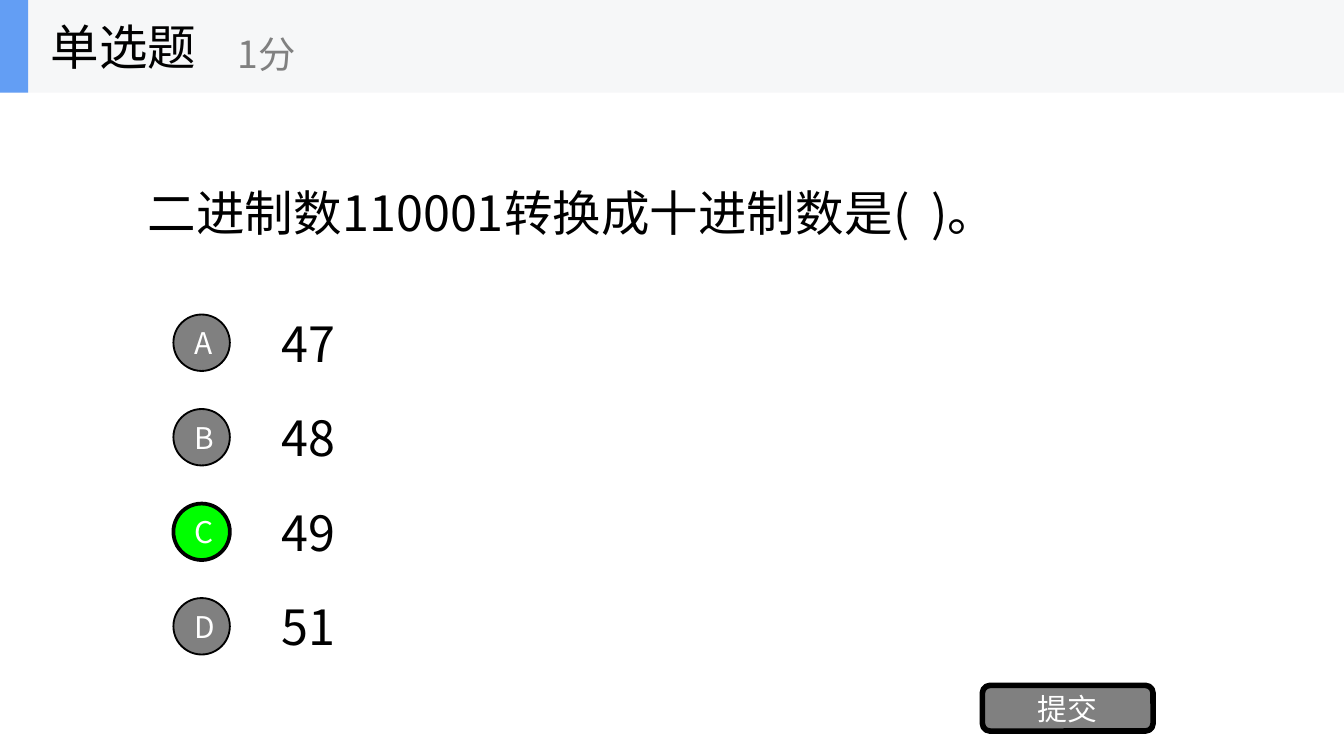
from dataclasses import dataclass

from pptx import Presentation
from pptx.dml.color import RGBColor
from pptx.enum.shapes import MSO_SHAPE
from pptx.enum.text import MSO_ANCHOR, MSO_AUTO_SIZE, PP_ALIGN
from pptx.oxml.ns import qn
from pptx.util import Inches, Pt

HEADING = "单选题"
SCORE = "1分"
QUESTION = "二进制数110001转换成十进制数是(  )。"
OPTIONS = [("A", "47"), ("B", "48"), ("C", "49"), ("D", "51")]
CORRECT = "C"
SUBMIT = "提交"


@dataclass(frozen=True)
class Theme:
    font: str = "Noto Sans CJK SC"
    ink: str = "000000"
    light: str = "FFFFFF"
    muted: str = "808080"
    correct: str = "00FF00"
    band: str = "F6F7F8"
    accent: str = "639EF4"
    body_size: int = 26
    score_size: int = 20
    button_size: int = 16


THEME = Theme()
SLIDE_WIDTH = 10
SLIDE_HEIGHT = SLIDE_WIDTH * 9 / 16
BAND_HEIGHT = 0.69
FIRST_CENTER, LAST_CENTER = 2.55, 4.66
OPTION_PITCH = (LAST_CENTER - FIRST_CENTER) / (len(OPTIONS) - 1)
ANSWER_HEIGHT = 0.53
BADGE_SIZE = 0.42


def write(shape, text, size, color, align=PP_ALIGN.LEFT):
    frame = shape.text_frame
    frame.text = text
    frame.word_wrap = True
    frame.auto_size = MSO_AUTO_SIZE.NONE
    frame.vertical_anchor = MSO_ANCHOR.MIDDLE
    paragraph = frame.paragraphs[0]
    paragraph.alignment = align
    font = paragraph.font
    font.size = Pt(size)
    font.color.rgb = RGBColor.from_string(color)
    font.name = THEME.font
    defaults = paragraph._p.pPr.find(qn("a:defRPr"))
    east_asian = defaults.makeelement(qn("a:ea"), {"typeface": THEME.font})
    defaults.find(qn("a:latin")).addnext(east_asian)


def add_label(shapes, box, text, size, color):
    write(shapes.add_textbox(*map(Inches, box)), text, size, color)


def add_block(shapes, kind, box, fill, border=0):
    block = shapes.add_shape(kind, *map(Inches, box))
    block.shadow.inherit = False
    block.fill.solid()
    block.fill.fore_color.rgb = RGBColor.from_string(fill)
    if border:
        block.line.color.rgb = RGBColor.from_string(THEME.ink)
        block.line.width = Pt(border)
    else:
        block.line.fill.background()
    return block


def add_button(shapes, kind, box, text, fill, border):
    button = add_block(shapes, kind, box, fill, border)
    write(button, text, THEME.button_size, THEME.light, PP_ALIGN.CENTER)


def add_question(slide):
    question = slide.shapes.title
    question.left, question.top = Inches(1), Inches(1.31)
    question.width, question.height = Inches(6.73), Inches(0.53)
    write(question, QUESTION, THEME.body_size, THEME.ink)


def add_options(shapes):
    for row, (letter, answer) in enumerate(OPTIONS):
        center = FIRST_CENTER + row * OPTION_PITCH
        add_label(shapes, (2, center - ANSWER_HEIGHT / 2, 0.73, ANSWER_HEIGHT),
                  answer, THEME.body_size, THEME.ink)
        fill, border = (THEME.correct, 2) if letter == CORRECT else (THEME.muted, 1)
        add_button(shapes, MSO_SHAPE.OVAL,
                   (1.29, center - BADGE_SIZE / 2, BADGE_SIZE, BADGE_SIZE),
                   letter, fill, border)


def add_header(shapes):
    header = shapes.add_group_shape().shapes
    add_block(header, MSO_SHAPE.RECTANGLE, (0, 0, SLIDE_WIDTH, BAND_HEIGHT), THEME.band)
    add_block(header, MSO_SHAPE.RECTANGLE, (0, 0, 0.21, BAND_HEIGHT), THEME.accent)
    add_label(header, (0.28, 0, 2.08, BAND_HEIGHT), HEADING, THEME.body_size, THEME.ink)
    add_label(header, (1.67, 0.12, 2.5, 0.56), SCORE, THEME.score_size, THEME.muted)


def main():
    quiz = Presentation()
    quiz.slide_width, quiz.slide_height = Inches(SLIDE_WIDTH), Inches(SLIDE_HEIGHT)
    slide = quiz.slides.add_slide(quiz.slide_layouts.get_by_name("Title Only"))
    add_question(slide)
    add_options(slide.shapes)
    add_button(slide.shapes, MSO_SHAPE.ROUNDED_RECTANGLE, (7.31, 5.1, 1.27, 0.34),
               SUBMIT, THEME.muted, 3)
    add_header(slide.shapes)
    quiz.save("out.pptx")


if __name__ == "__main__":
    main()
